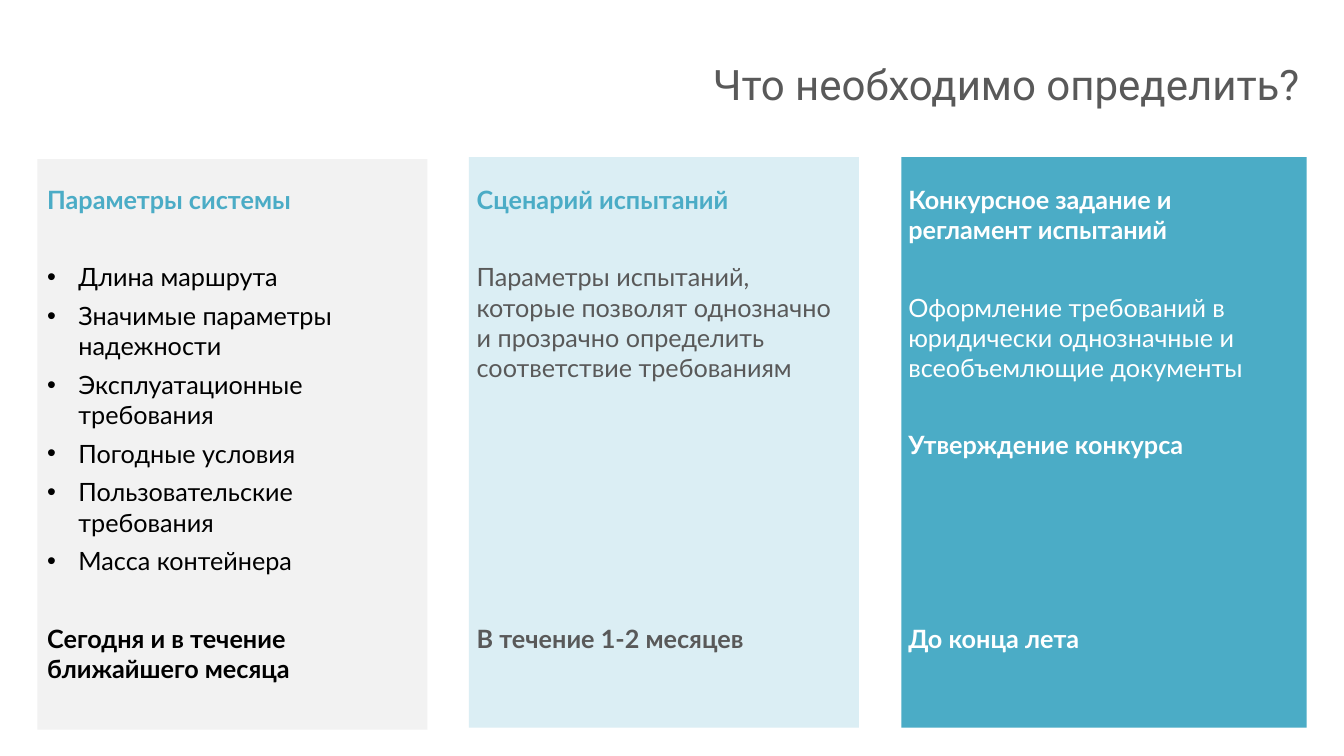
"""Build the slide on what has to be settled before the contest."""
from dataclasses import dataclass
from typing import Any

import pptx
import pptx.dml.color
import pptx.enum.shapes
import pptx.enum.text
import pptx.oxml.ns
import pptx.util
from lxml import etree

Inches = pptx.util.Inches
Pt = pptx.util.Pt
Color = pptx.dml.color.RGBColor
Align = pptx.enum.text.PP_ALIGN
Anchor = pptx.enum.text.MSO_ANCHOR
AutoSize = pptx.enum.text.MSO_AUTO_SIZE


@dataclass(frozen=True)
class Theme:
    teal: Color = Color.from_string("4BACC6")
    pale: Color = Color.from_string("DBEEF4")
    light: Color = Color.from_string("F2F2F2")
    gray: Color = Color.from_string("595959")
    black: Color = Color.from_string("000000")
    white: Color = Color.from_string("FFFFFF")
    title_font: str = "Roboto"
    body_font: str = "Lato"
    title_size: float = 30
    body_size: float = 18
    spacing: float = 3
    empty_line: float = 27.6
    indent: float = 0.31


THEME = Theme()


@dataclass(frozen=True)
class Area:
    left: float
    top: float
    width: float
    height: float

    def lengths(self) -> list[int]:
        """Return the four lengths in slide units."""
        return [Inches(value) for value in (self.left, self.top, self.width, self.height)]


@dataclass(frozen=True)
class Entry:
    text: str
    color: Color
    bold: bool = False
    bullet: bool = False
    lines_above: int = 0


@dataclass(frozen=True)
class Column:
    panel: Area
    fill: Color
    text_area: Area
    entries: list[Entry]


def apply_format(target: Any, values: dict[str, Any]) -> None:
    """Set each named attribute on the target."""
    for name, value in values.items():
        setattr(target, name, value)


def add_panel(page: Any, column: Column) -> None:
    """Draw the coloured rectangle of a column."""
    panel = page.shapes.add_shape(pptx.enum.shapes.MSO_SHAPE.RECTANGLE, *column.panel.lengths())
    panel.shadow.inherit = False
    panel.fill.solid()
    panel.fill.fore_color.rgb = column.fill
    panel.line.fill.background()


def add_span(para: Any, text: str, color: Color, values: dict[str, Any]) -> None:
    """Append formatted text to a paragraph."""
    span = para.add_run()
    span.text = text
    apply_format(span.font, values)
    span.font.color.rgb = color


def add_bullet(para: Any) -> None:
    """Give a paragraph a hanging round bullet."""
    properties = para._p.get_or_add_pPr()
    indent = Inches(THEME.indent)
    properties.set("marL", str(indent))
    properties.set("indent", str(-indent))
    for tag, name, value in (("a:buFont", "typeface", "Arial"), ("a:buChar", "char", "•")):
        etree.SubElement(properties, pptx.oxml.ns.qn(tag)).set(name, value)


def add_title(page: Any, text: str, area: Area) -> None:
    """Add the right-aligned title."""
    frame = page.shapes.add_textbox(*area.lengths()).text_frame
    apply_format(frame, {"word_wrap": True, "vertical_anchor": Anchor.MIDDLE})
    para = frame.paragraphs[0]
    para.alignment = Align.RIGHT
    add_span(para, text, THEME.gray, {"name": THEME.title_font, "size": Pt(THEME.title_size)})


def add_entries(page: Any, column: Column) -> None:
    """Add the text of a column."""
    frame = page.shapes.add_textbox(*column.text_area.lengths()).text_frame
    apply_format(frame, {"word_wrap": True, "auto_size": AutoSize.SHAPE_TO_FIT_TEXT})
    for index, entry in enumerate(column.entries):
        para = frame.add_paragraph() if index else frame.paragraphs[0]
        if entry.bullet:
            add_bullet(para)
        above = THEME.spacing + entry.lines_above * THEME.empty_line if index else 0
        apply_format(para, {"space_before": Pt(above), "space_after": Pt(THEME.spacing)})
        add_span(para, entry.text, entry.color, {
            "name": THEME.body_font, "size": Pt(THEME.body_size), "bold": entry.bold,
        })


PARAMETERS = [
    "Длина маршрута",
    "Значимые параметры надежности",
    "Эксплуатационные требования",
    "Погодные условия",
    "Пользовательские требования",
    "Масса контейнера",
]

COLUMNS = [
    Column(Area(8.94, 1.56, 4.02, 5.66), THEME.teal, Area(8.91, 1.78, 4.08, 4.8), [
        Entry("Конкурсное задание и регламент испытаний", THEME.white, bold=True),
        Entry("Оформление требований в юридически однозначные и всеобъемлющие документы",
              THEME.white, lines_above=1),
        Entry("Утверждение конкурса", THEME.white, bold=True, lines_above=1),
        Entry("До конца лета", THEME.white, bold=True, lines_above=4),
    ]),
    Column(Area(4.65, 1.56, 3.87, 5.66), THEME.pale, Area(4.63, 1.78, 3.87, 4.8), [
        Entry("Сценарий испытаний", THEME.teal, bold=True),
        Entry("Параметры испытаний, которые позволят однозначно и прозрачно определить "
              "соответствие требованиям", THEME.gray, lines_above=1),
        Entry("В течение 1-2 месяцев", THEME.gray, bold=True, lines_above=6),
    ]),
    Column(Area(0.37, 1.58, 3.87, 5.66), THEME.light, Area(0.37, 1.78, 3.88, 5.1), [
        Entry("Параметры системы", THEME.teal, bold=True),
        *(Entry(text, THEME.black, bullet=True, lines_above=int(index == 0))
          for index, text in enumerate(PARAMETERS)),
        Entry("Сегодня и в течение ближайшего месяца", THEME.black, bold=True, lines_above=1),
    ]),
]


def main() -> None:
    """Build and save the deck."""
    deck = pptx.Presentation()
    apply_format(deck, {"slide_width": Inches(13.33), "slide_height": Inches(7.5)})
    page = deck.slides.add_slide(deck.slide_layouts[6])
    for column in COLUMNS:
        add_panel(page, column)
    add_title(page, "Что необходимо определить?", Area(2.81, 0.28, 10.18, 1.1))
    for column in reversed(COLUMNS):
        add_entries(page, column)
    deck.save("out.pptx")


if __name__ == "__main__":
    main()
